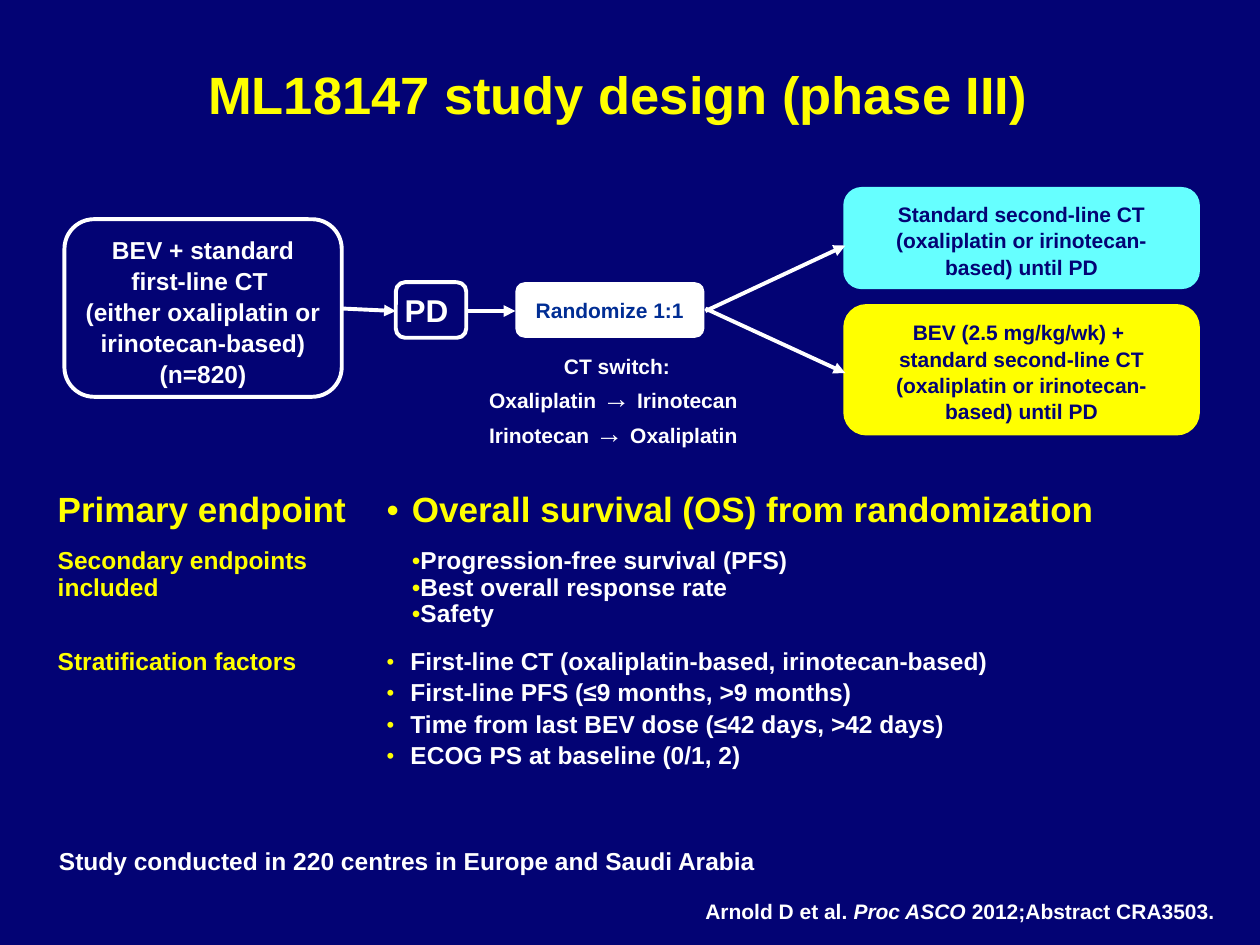
from dataclasses import dataclass

from lxml import etree
from pptx import Presentation
from pptx.dml.color import RGBColor
from pptx.enum import shapes, text
from pptx.oxml.ns import qn
from pptx.util import Cm, Pt

MID, TOP, LOW = (text.MSO_ANCHOR.MIDDLE, text.MSO_ANCHOR.TOP,
                 text.MSO_ANCHOR.BOTTOM)
LEFT, CENTER = text.PP_ALIGN.LEFT, text.PP_ALIGN.CENTER
NO_GRID = "{2D5ABB26-0587-4C30-8999-92F81FD0307C}"


@dataclass
class Theme:
    navy: str = "030374"
    blue: str = "002D94"
    white: str = "FFFFFF"
    yellow: str = "FFFF00"
    cyan: str = "66FFFF"
    face: str = "Arial"
    serif: str = "Times New Roman"
    title: int = 30
    head: int = 20
    mark: int = 18
    sign: int = 16
    body: int = 14
    small: int = 12
    stroke: float = 2.25


def color(code):
    return RGBColor.from_string(code)


def add(parent, tag, **attrs):
    node = etree.SubElement(parent, qn(tag))
    for key, value in attrs.items():
        node.set(key, value)
    return node


class Board:
    def __init__(self, slide, theme):
        self.slide, self.theme = slide, theme
        fill = slide.background.fill
        fill.solid()
        fill.fore_color.rgb = color(theme.navy)

    def put(self, frame, lines, size, ink, align=LEFT, space=1.0,
            gap=0, dot=None):
        """Fill a frame; a line is a string or a list of (text, font changes)."""
        for n, line in enumerate(lines):
            para = frame.paragraphs[0] if n == 0 else frame.add_paragraph()
            if dot:
                self.bullet(para, *dot)
            para.alignment = align
            para.line_spacing = space
            if n and gap:
                para.space_before = Pt(gap)
            font = para.font
            font.name, font.size, font.bold = self.theme.face, Pt(size), True
            font.color.rgb = color(ink)
            if isinstance(line, str):
                para.text = line
                continue
            for words, change in line:
                run = para.add_run()
                run.text = words
                run.font.name = change.get("name")
                run.font.size = change.get("size")
                run.font.italic = change.get("italic")

    def bullet(self, para, left, indent, scale):
        props = para._p.get_or_add_pPr()
        props.set("marL", str(Cm(left)))
        props.set("indent", str(Cm(indent)))
        add(add(props, "a:buClr"), "a:srgbClr", val=self.theme.yellow)
        add(props, "a:buSzPct", val=str(scale * 1000))
        add(props, "a:buFont", typeface=self.theme.face)
        add(props, "a:buChar", char="•")

    def box(self, place, lines, size, ink, fill=None, edge=None,
            anchor=TOP, side=0.25, align=CENTER, space=1.05):
        shape = self.slide.shapes.add_shape(
            shapes.MSO_SHAPE.ROUNDED_RECTANGLE, *map(Cm, place))
        shape.shadow.inherit = False
        if fill:
            shape.fill.solid()
            shape.fill.fore_color.rgb = color(fill)
        else:
            shape.fill.background()
        if edge:
            shape.line.color.rgb = color(edge)
            shape.line.width = Pt(self.theme.stroke)
        else:
            shape.line.fill.background()
        frame = shape.text_frame
        frame.word_wrap, frame.vertical_anchor = True, anchor
        frame.margin_left = frame.margin_right = Cm(side)
        self.put(frame, lines, size, ink, align, space)
        return frame

    def label(self, place, line, size, ink, wrap=False, anchor=TOP,
              align=LEFT):
        frame = self.slide.shapes.add_textbox(*map(Cm, place)).text_frame
        frame.word_wrap, frame.vertical_anchor = wrap, anchor
        self.put(frame, [line], size, ink, align)
        return frame

    def arrow(self, *ends):
        link = self.slide.shapes.add_connector(
            shapes.MSO_CONNECTOR.STRAIGHT, *map(Cm, ends))
        link.line.color.rgb = color(self.theme.white)
        link.line.width = Pt(self.theme.stroke)
        props = link._element.spPr
        add(props.find(qn("a:ln")), "a:tailEnd", type="triangle")
        add(props, "a:effectLst")

    def table(self, left, top, cols, rows):
        """Each row is (height, left cell, right cell), cells as put() args."""
        heights = [row[0] for row in rows]
        frame = self.slide.shapes.add_table(
            len(rows), len(cols), Cm(left), Cm(top),
            Cm(sum(cols)), Cm(sum(heights)))
        grid = frame.table
        grid.first_row = grid.horz_banding = False
        grid._tbl.tblPr.find(qn("a:tableStyleId")).text = NO_GRID
        for col, width in zip(grid.columns, cols):
            col.width = Cm(width)
        for row, (height, *cells) in zip(grid.rows, rows):
            row.height = Cm(height)
            for cell, args in zip(row.cells, cells):
                cell.fill.background()
                self.put(cell.text_frame, space=0.97, **args)


def main():
    deck = Presentation()
    deck.slide_width, deck.slide_height = Cm(25.4), Cm(19.05)
    t = Theme()
    board = Board(deck.slides.add_slide(deck.slide_layouts[6]), t)

    title = board.label((1.14, 0.64, 22.89, 2.01),
                        "ML18147 study design (phase III)", t.title, t.yellow,
                        wrap=True, anchor=LOW, align=CENTER)
    title.margin_left = 0

    board.box((1.3, 4.42, 5.59, 3.58),
              ["BEV + standard first-line CT ",
               "(either oxaliplatin or\nirinotecan-based)\n(n=820)"],
              t.body, t.white, edge=t.white)
    board.box((7.98, 5.69, 1.42, 1.12), ["PD "], t.mark, t.white,
              edge=t.white, anchor=MID, side=0, space=1.0)
    board.box((10.39, 5.69, 3.81, 1.12), ["Randomize 1:1"], t.small, t.blue,
              fill=t.white, anchor=MID)
    arms = [
        (3.81, 1.98, t.cyan, "Standard second-line CT "
         "(oxaliplatin or irinotecan-based) until PD"),
        (6.17, 2.57, t.yellow, "BEV (2.5 mg/kg/wk) + \nstandard second-line "
         "CT (oxaliplatin or irinotecan-based) until PD"),
    ]
    for top, height, fill, words in arms:
        board.box((17.04, top, 7.11, height), [words], t.small, t.navy,
                  fill=fill, edge=fill)

    board.arrow(6.91, 6.22, 7.98, 6.27)
    board.arrow(9.4, 6.27, 10.39, 6.27)
    board.arrow(14.22, 6.27, 17.04, 4.95)
    board.arrow(14.22, 6.22, 17.04, 7.52)

    drugs = ["Oxaliplatin", "Irinotecan"]
    sign = ("→ ", {"name": t.serif, "size": Pt(t.sign)})
    swaps = [[(a + " ", {}), sign, (b, {})]
             for a, b in (drugs, drugs[::-1])]
    switch = board.box((9.53, 7.26, 5.82, 1.65), ["CT switch:", *swaps],
                       t.small, t.white, anchor=MID, align=LEFT)
    switch.paragraphs[0].alignment = CENTER

    board.table(0.91, 9.8, (6.63, 16.23), [
        (1.12,
         dict(lines=["Primary endpoint"], size=t.head, ink=t.yellow),
         dict(lines=["Overall survival (OS) from randomization"],
              size=t.head, ink=t.yellow, dot=(0.51, -0.51, 100))),
        (2.03,
         dict(lines=["Secondary endpoints included"], size=t.body,
              ink=t.yellow),
         dict(lines=["Progression-free survival (PFS)",
                     "Best overall response rate", "Safety"],
              size=t.body, ink=t.white, dot=(0, 0.51, 100))),
        (2.97,
         dict(lines=["Stratification factors"], size=t.body, ink=t.yellow),
         dict(lines=["First-line CT (oxaliplatin-based, irinotecan-based)",
                     "First-line PFS (≤9 months, >9 months)",
                     "Time from last BEV dose (≤42 days, >42 days)",
                     "ECOG PS at baseline (0/1, 2)"],
              size=t.body, ink=t.white, gap=2.8, dot=(0.48, -0.48, 89))),
    ])

    board.label((0.94, 16.94, 14.88, 0.86),
                "Study conducted in 220 centres in Europe and Saudi Arabia",
                t.body, t.white)
    board.label((13.97, 17.98, 10.92, 0.76),
                [("Arnold D et al. ", {}), ("Proc ASCO ", {"italic": True}),
                 ("2012;Abstract CRA3503.", {})], t.small, t.white)
    deck.save("out.pptx")


if __name__ == "__main__":
    main()
